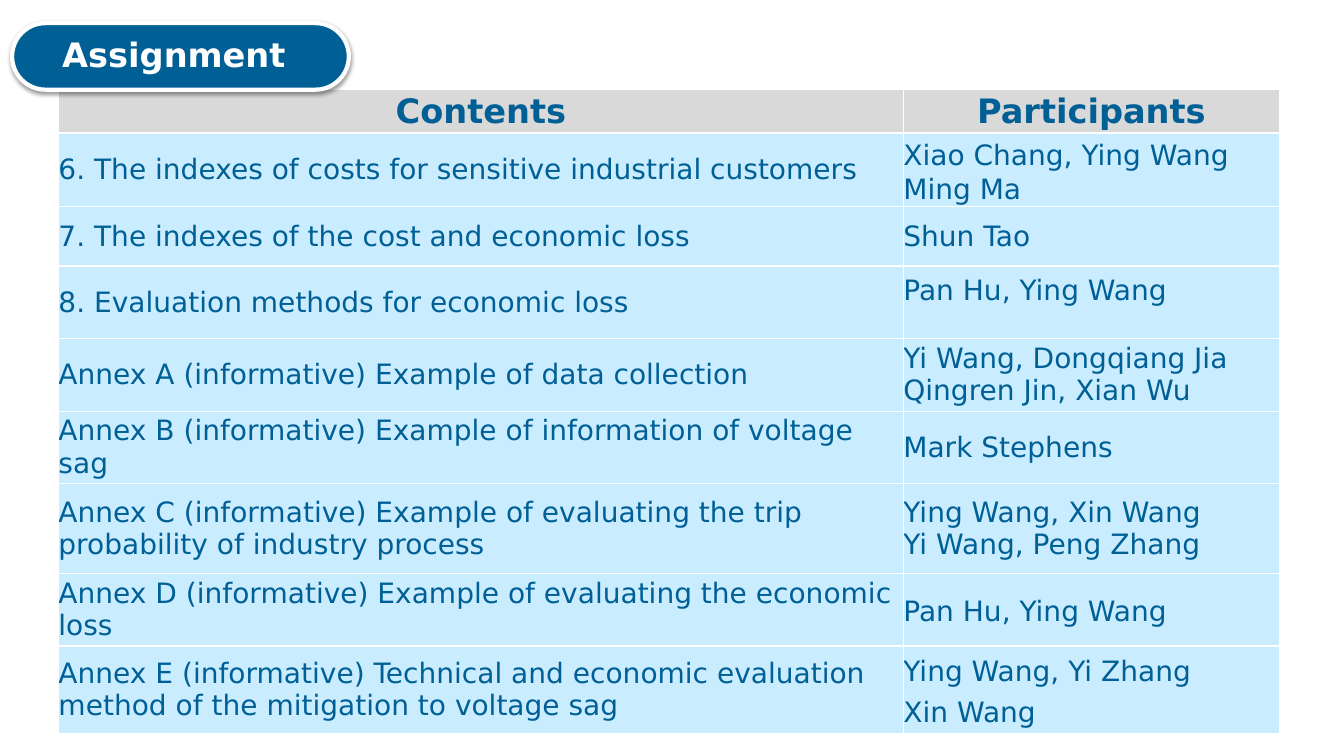
from dataclasses import dataclass

from pptx import Presentation
from pptx.dml.color import RGBColor
from pptx.enum.shapes import MSO_SHAPE
from pptx.enum.text import MSO_ANCHOR, MSO_AUTO_SIZE, PP_ALIGN
from pptx.oxml import parse_xml
from pptx.oxml.ns import nsdecls, qn
from pptx.util import Inches, Pt


@dataclass(frozen=True)
class Theme:
    font: str = "DejaVu Sans"
    blue: str = "006096"
    pale: str = "B3E5FF"
    grey: str = "D9D9D9"
    white: str = "FFFFFF"
    head: int = 24
    body: int = 20


THEME = Theme()
COLS = [8.38, 3.73]
HEADS = ["Contents", "Participants"]
ROWS = [
    (0.73, "6. The indexes of costs for sensitive industrial customers",
     ["Xiao Chang, Ying Wang　", "Ming Ma"]),
    (0.59, "7. The indexes of the cost and economic loss", ["Shun Tao"]),
    (0.72, "8. Evaluation methods for economic loss", ["Pan Hu, Ying Wang　"]),
    (0.72, "Annex A (informative) Example of data collection",
     ["Yi Wang, Dongqiang Jia", "Qingren Jin, Xian Wu"]),
    (0.72, "Annex B (informative) Example of information of voltage sag",
     ["Mark Stephens"]),
    (0.89, "Annex C (informative) Example of evaluating the trip "
     "probability of industry process",
     ["Ying Wang, Xin Wang", "Yi Wang, Peng Zhang"]),
    (0.72, "Annex D (informative) Example of evaluating the economic loss",
     ["Pan Hu, Ying Wang　"]),
    (0.87, "Annex E (informative) Technical and economic evaluation "
     "method of the mitigation to voltage sag",
     ["Ying Wang, Yi Zhang　", "Xin Wang　"]),
]
RAISED = 3


def write(frame, lines, size=THEME.body, color=THEME.blue, bold=False,
          align=PP_ALIGN.LEFT):
    for i, line in enumerate(lines):
        para = frame.paragraphs[0] if i == 0 else frame.add_paragraph()
        para.alignment = align
        run = para.add_run()
        run.text = line
        font = run.font
        font.name, font.size, font.bold = THEME.font, Pt(size), bold
        font.color.rgb = RGBColor.from_string(color)


def paint(cell, color, alpha=100):
    props = cell._tc.get_or_add_tcPr()
    for side in "LRTB":
        props.append(parse_xml(
            f'<a:ln{side} {nsdecls("a")} w="{Pt(1)}"><a:solidFill>'
            f'<a:srgbClr val="{THEME.white}"/></a:solidFill></a:ln{side}>'))
    cell.fill.solid()
    cell.fill.fore_color.rgb = RGBColor.from_string(color)
    if alpha < 100:
        tint = props.find(qn("a:solidFill")).find(qn("a:srgbClr"))
        tint.append(parse_xml(
            f'<a:alpha {nsdecls("a")} val="{alpha * 1000}"/>'))


def add_grid(slide, left, top, width, height):
    grid = slide.shapes.add_table(
        len(ROWS) + 1, len(COLS), Inches(left), Inches(top),
        Inches(width), Inches(height)).table
    grid.first_row = grid.horz_banding = False
    for col, size in zip(grid.columns, COLS):
        col.width = Inches(size)
    tall = [0.43] + [row[0] for row in ROWS]
    texts = [[[head] for head in HEADS]]
    texts += [[[topic], people] for _, topic, people in ROWS]
    for r, (size, pair) in enumerate(zip(tall, texts)):
        grid.rows[r].height = Inches(size)
        for c, lines in enumerate(pair):
            cell = grid.cell(r, c)
            cell.margin_left = cell.margin_right = 0
            cell.margin_top = cell.margin_bottom = 0
            cell.vertical_anchor = MSO_ANCHOR.MIDDLE
            if r == 0:
                paint(cell, THEME.grey)
                write(cell.text_frame, lines, size=THEME.head, bold=True,
                      align=PP_ALIGN.CENTER)
            else:
                paint(cell, THEME.pale, alpha=70)
                write(cell.text_frame, lines)
    grid.cell(RAISED, 1).margin_bottom = Inches(0.28)


def add_badge(slide, left, top, width, height):
    pill = slide.shapes.add_shape(
        MSO_SHAPE.ROUNDED_RECTANGLE, Inches(left), Inches(top),
        Inches(width), Inches(height))
    pill.adjustments[0] = 0.5
    pill.fill.solid()
    pill.fill.fore_color.rgb = RGBColor.from_string(THEME.blue)
    pill.line.color.rgb = RGBColor.from_string(THEME.white)
    pill.line.width = Pt(3)
    pill.shadow.inherit = False
    pill._element.spPr.find(qn("a:effectLst")).append(parse_xml(
        f'<a:outerShdw {nsdecls("a")} blurRad="{Pt(3.1)}" dist="{Pt(1.6)}" '
        'dir="5400000" rotWithShape="0"><a:srgbClr val="000000">'
        '<a:alpha val="38000"/></a:srgbClr></a:outerShdw>'))

    title = slide.shapes.title
    title.left, title.top = Inches(left + 0.35), Inches(top + 0.06)
    title.width, title.height = Inches(width - 0.83), Inches(0.5)
    frame = title.text_frame
    frame.auto_size = MSO_AUTO_SIZE.NONE
    frame.word_wrap = True
    frame.vertical_anchor = MSO_ANCHOR.MIDDLE
    write(frame, ["Assignment"], size=THEME.head, color=THEME.white,
          bold=True, align=PP_ALIGN.CENTER)
    pill._element.addnext(title._element)


def main():
    deck = Presentation()
    deck.slide_width, deck.slide_height = Inches(13.33), Inches(7.5)
    slide = deck.slides.add_slide(deck.slide_layouts[5])
    add_grid(slide, 0.58, 0.89, 12.11, 6.39)
    add_badge(slide, 0.12, 0.23, 3.34, 0.66)
    deck.save("out.pptx")


if __name__ == "__main__":
    main()
